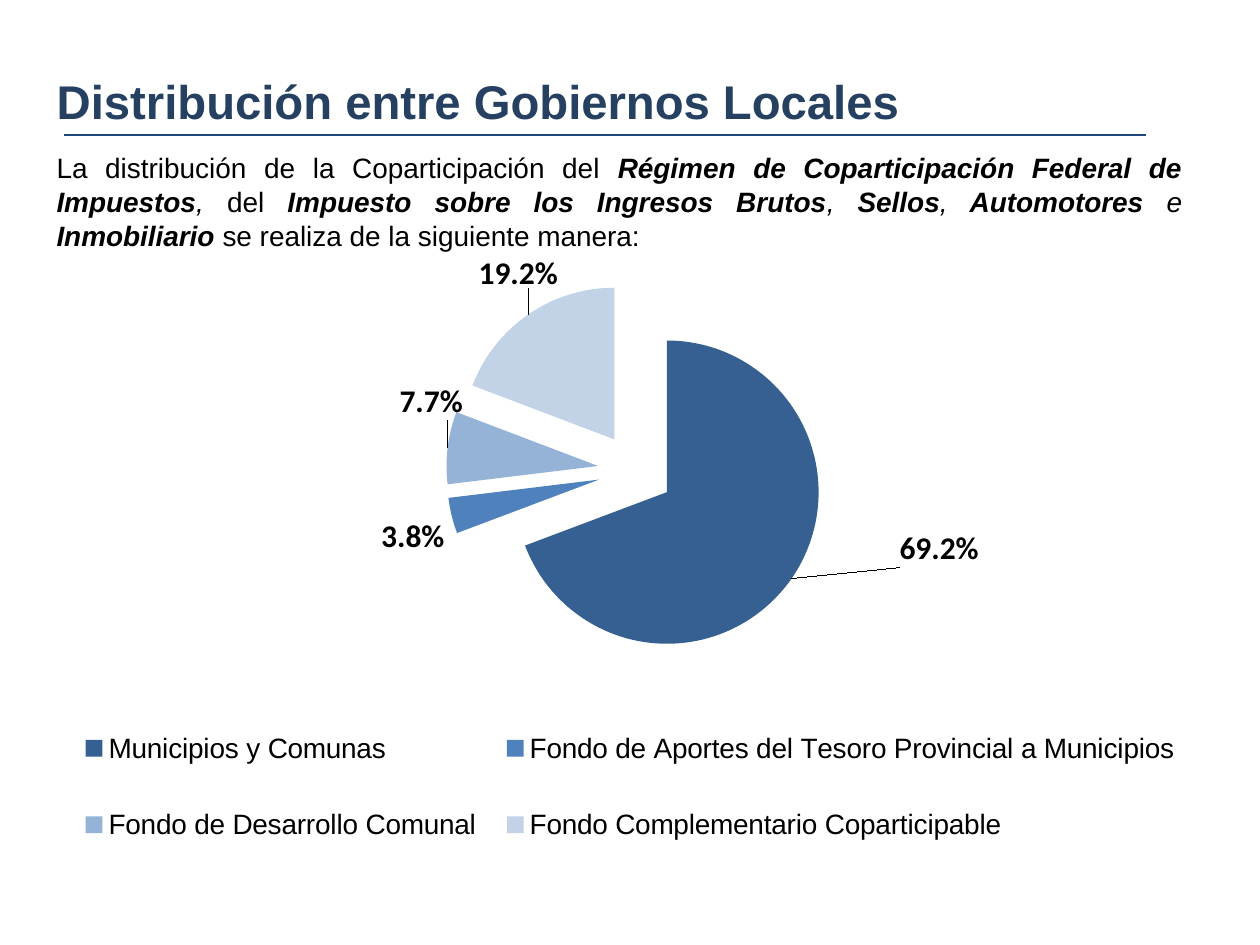
from lxml import etree
from pptx import Presentation, util as u
from pptx.chart.data import CategoryChartData
from pptx.dml.color import RGBColor
from pptx.enum import chart as charts, shapes, text
from pptx.oxml import parse_xml
from pptx.oxml.ns import nsdecls, qn

BLACK = RGBColor(0x00, 0x00, 0x00)
TITLE_BLUE = RGBColor(0x25, 0x40, 0x61)
RULE_BLUE = RGBColor(0x1F, 0x49, 0x7D)
SLICE_BLUES = [
    RGBColor(0x37, 0x60, 0x92),
    RGBColor(0x4F, 0x81, 0xBD),
    RGBColor(0x95, 0xB3, 0xD7),
    RGBColor(0xC2, 0xD3, 0xE8),
]
SHARES = {
    "Municipios y Comunas": 69.2,
    "Fondo de Aportes del Tesoro Provincial a Municipios": 3.8,
    "Fondo de Desarrollo Comunal": 7.7,
    "Fondo Complementario Coparticipable": 19.2,
}
LABEL_SHIFTS = [(0.09, -0.08), (0, 0), (0.02, -0.04), (0.03, -0.03)]
LABEL_FORMAT = '0.0"%"'
INTRODUCTION = [
    ("La distribución de la Coparticipación del ", False, False),
    ("Régimen de Coparticipación Federal de Impuestos", True, True),
    (", ", False, True),
    ("del ", False, False),
    ("Impuesto sobre los Ingresos Brutos", True, True),
    (", ", False, True),
    ("Sellos", True, True),
    (",", False, True),
    (" Automotores ", True, True),
    ("e", False, True),
    (" Inmobiliario ", True, True),
    ("se realiza de la siguiente manera:", False, False),
]


def format_font(font, name="Arial", size=16, color=BLACK, bold=False, italic=False):
    font.name = name
    font.size = u.Pt(size)
    font.color.rgb = color
    font.bold = bold
    font.italic = italic


def add_text(paragraph, content, **style):
    run = paragraph.add_run()
    run.text = content
    format_font(run.font, **style)


def manual_layout(x, y, width=None, height=None, target=None):
    layout = parse_xml(f"<c:layout {nsdecls('c')}><c:manualLayout/></c:layout>")
    values = []
    if target:
        values.append(("layoutTarget", target))
    if width:
        values += [("xMode", "edge"), ("yMode", "edge")]
    values += [("x", x), ("y", y)]
    if width:
        values += [("w", width), ("h", height)]
    for tag, value in values:
        etree.SubElement(layout[0], qn(f"c:{tag}")).set("val", str(value))
    return layout


def replace_layout(parent, layout, after):
    for existing in parent.findall(qn("c:layout")):
        parent.remove(existing)
    if after is None:
        parent.insert(0, layout)
    else:
        parent.find(qn(after)).addnext(layout)


class SlideBuilder:
    """Hold the slide and its shared style, and add each kind of element."""

    def __init__(self, presentation):
        self.slide = presentation.slides.add_slide(presentation.slide_layouts[5])
        self.left = u.Cm(0.89)

    def add_title(self, content):
        title = self.slide.shapes.title
        title.left, title.top = self.left, u.Cm(1.32)
        title.width, title.height = u.Cm(22.4), u.Cm(1.42)
        frame = title.text_frame
        frame.word_wrap = True
        frame.auto_size = text.MSO_AUTO_SIZE.SHAPE_TO_FIT_TEXT
        frame.vertical_anchor = text.MSO_ANCHOR.TOP
        frame.paragraphs[0].alignment = text.PP_ALIGN.LEFT
        add_text(frame.paragraphs[0], content, size=27, color=TITLE_BLUE, bold=True)

    def add_rule(self, left, right, top):
        rule = self.slide.shapes.add_connector(
            shapes.MSO_CONNECTOR.STRAIGHT, left, top, right, top
        )
        rule.line.color.rgb = RULE_BLUE
        rule.line.width = u.Pt(1.5)
        etree.SubElement(rule.element.spPr, qn("a:effectLst"))

    def add_paragraph(self, runs):
        box = self.slide.shapes.add_textbox(self.left, u.Cm(2.92), u.Cm(23.19), u.Cm(2.31))
        frame = box.text_frame
        frame.word_wrap = True
        frame.auto_size = text.MSO_AUTO_SIZE.SHAPE_TO_FIT_TEXT
        paragraph = frame.paragraphs[0]
        paragraph.alignment = text.PP_ALIGN.JUSTIFY
        for content, bold, italic in runs:
            add_text(paragraph, content, bold=bold, italic=italic)

    def add_pie(self, shares):
        data = CategoryChartData(number_format="0.0")
        data.categories = list(shares)
        data.add_series("Series 1", list(shares.values()))
        chart = self.slide.shapes.add_chart(
            charts.XL_CHART_TYPE.PIE, u.Cm(1.3), u.Cm(5.13), u.Cm(22.81), u.Cm(13.41), data
        ).chart
        format_font(chart.font, name="Calibri", size=18)
        chart.has_title = False
        chart.has_legend = True
        chart.legend.position = charts.XL_LEGEND_POSITION.BOTTOM
        chart.legend.include_in_layout = False
        format_font(chart.legend.font)

        plot = chart.plots[0]
        plot.vary_by_categories = True
        plot.has_data_labels = True
        labels = plot.data_labels
        labels.show_value = True
        labels.number_format = LABEL_FORMAT
        labels.number_format_is_linked = False
        labels.position = charts.XL_LABEL_POSITION.OUTSIDE_END
        format_font(labels.font, name="Calibri", size=18, bold=True)
        self.style_slices(chart, plot.series[0])

        chart_xml = chart.element.find(qn("c:chart"))
        replace_layout(
            chart_xml.find(qn("c:plotArea")),
            manual_layout(0.04, 0.04, 0.93, 0.57, "inner"),
            None,
        )
        replace_layout(
            chart_xml.find(qn("c:legend")), manual_layout(0, 0.65, 1, 0.3), "c:legendPos"
        )

    def style_slices(self, chart, series):
        for index, color in enumerate(SLICE_BLUES):
            point = series.points[index]
            point.format.fill.solid()
            point.format.fill.fore_color.rgb = color
            label = point.data_label
            format_font(label.font, name="Calibri", size=18, bold=True)
            label.position = charts.XL_LABEL_POSITION.OUTSIDE_END
        for label_xml, shift in zip(chart.element.iter(qn("c:dLbl")), LABEL_SHIFTS):
            replace_layout(label_xml, manual_layout(*shift), "c:idx")
            number_format = etree.Element(qn("c:numFmt"))
            number_format.set("formatCode", LABEL_FORMAT)
            number_format.set("sourceLinked", "0")
            label_xml.find(qn("c:layout")).addnext(number_format)
        explosion = etree.Element(qn("c:explosion"))
        explosion.set("val", "25")
        next(chart.element.iter(qn("c:dPt"))).addprevious(explosion)


def main():
    presentation = Presentation()
    presentation.slide_width, presentation.slide_height = u.Cm(25.4), u.Cm(19.05)
    builder = SlideBuilder(presentation)
    builder.add_pie(SHARES)
    builder.add_rule(u.Cm(1.3), u.Cm(23.11), u.Cm(2.72))
    builder.add_title("Distribución entre Gobiernos Locales")
    builder.add_paragraph(INTRODUCTION)
    presentation.save("out.pptx")


if __name__ == "__main__":
    main()
